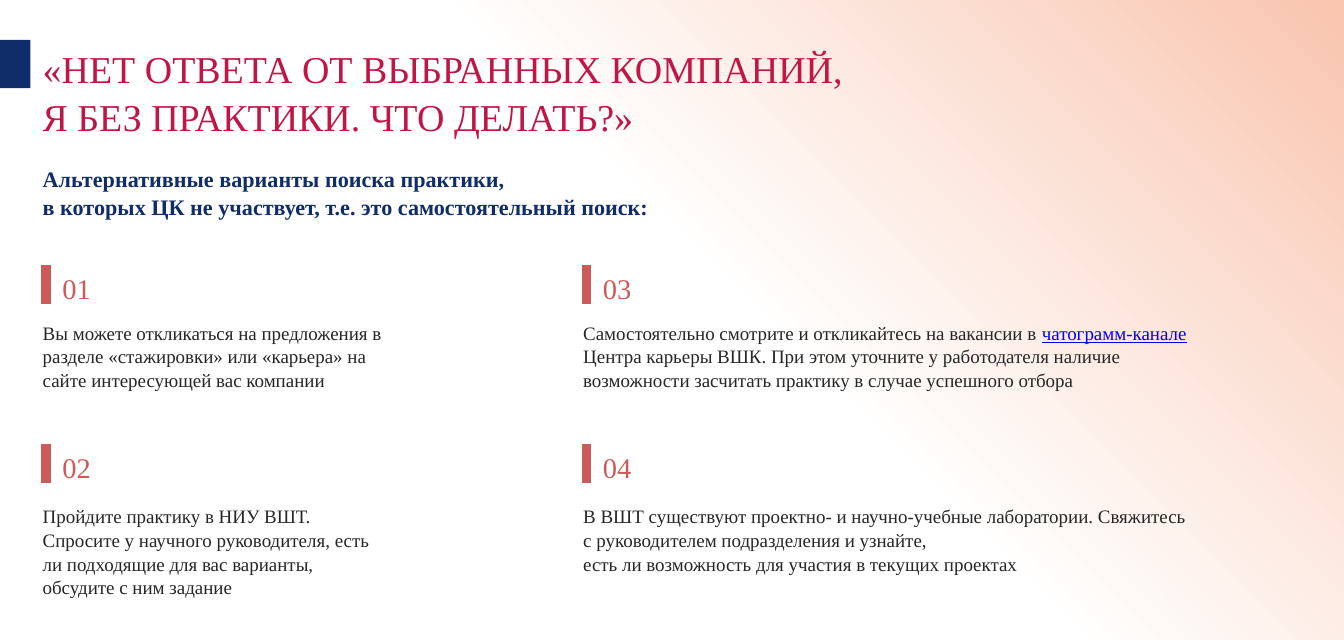
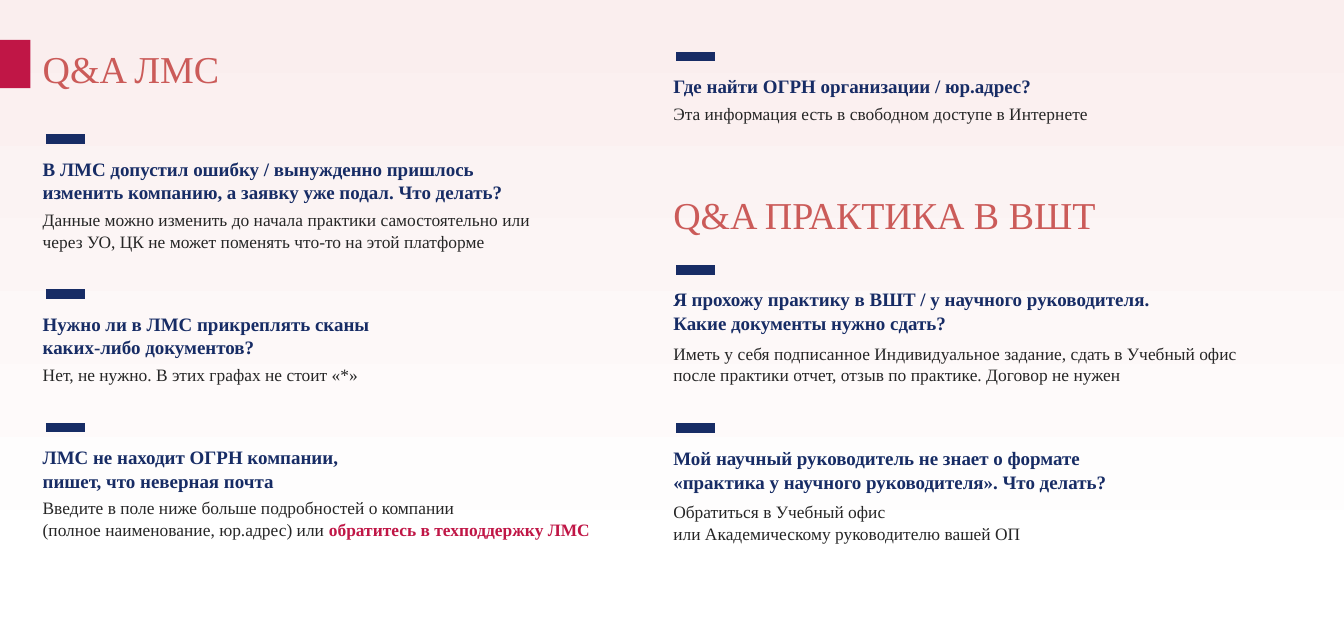
from pptx import Presentation
from pptx.dml.color import RGBColor
from pptx.enum.shapes import MSO_CONNECTOR, MSO_SHAPE
from pptx.enum.text import PP_ALIGN
from pptx.oxml.ns import qn
from pptx.util import Pt
from lxml import etree

LEFT, CENTER = PP_ALIGN.LEFT, PP_ALIGN.CENTER
LINE = MSO_CONNECTOR.STRAIGHT
RECT = MSO_SHAPE.RECTANGLE

FONT = "Times New Roman"
COLORS = {
    "navy": "102D69",
    "ink": "172C65",
    "red": "C01646",
    "coral": "CB5B59",
    "text": "262626",
    "link": "0000FF",
    "white": "FFFFFF",
    "peach": "F9C5AF",
    "pink": "FAEEEE",
}


def color(name):
    return RGBColor.from_string(COLORS[name])


class Deck:
    def __init__(self, width, height):
        self.prs = Presentation()
        self.prs.slide_width = Pt(width)
        self.prs.slide_height = Pt(height)
        self.slide = None

    def page(self, tint, start, angle, flag):
        self.slide = self.prs.slides.add_slide(self.prs.slide_layouts[6])
        fill = self.slide.background.fill
        fill.gradient()
        fill.gradient_angle = angle
        stops = zip(fill.gradient_stops, (start, 1), ("white", tint))
        for stop, place, name in stops:
            stop.position = place
            stop.color.rgb = color(name)
        self.flag(flag)

    def flag(self, name):
        shape = self.slide.shapes.add_shape(RECT, 0, Pt(25.3), Pt(19.3), Pt(30.5))
        shape.shadow.inherit = False
        shape.fill.solid()
        shape.fill.fore_color.rgb = color(name)
        shape.line.fill.background()

    def bar(self, x, y, dx, dy, name):
        line = self.slide.shapes.add_connector(
            LINE, Pt(x), Pt(y), Pt(x + dx), Pt(y + dy))
        line.line.width = Pt(6)
        line.line.color.rgb = color(name)
        props = line._element.find(qn("p:spPr"))
        etree.SubElement(props, qn("a:effectLst"))

    def text(self, paras, x, y, w, h, size=12, tone="text", bold=False, align=LEFT):
        box = self.slide.shapes.add_textbox(Pt(x), Pt(y), Pt(w), Pt(h))
        frame = box.text_frame
        frame.word_wrap = True
        frame.margin_left = frame.margin_right = 0
        frame.margin_top = frame.margin_bottom = 0
        for i, para in enumerate(paras):
            p = frame.add_paragraph() if i else frame.paragraphs[0]
            p.alignment = align
            p.line_spacing = 1.05
            for part in [para] if isinstance(para, str) else para:
                words, look = (part, {}) if isinstance(part, str) else part
                run = p.add_run()
                run.text = words
                font = run.font
                font.name = FONT
                font.size = Pt(size)
                font.bold = look.get("bold", bold)
                font.underline = look.get("line", False)
                font.color.rgb = color(look.get("tone", tone))

    def title(self, paras, x, y, tone):
        self.text(paras, x, y, 820 - x, 30 * len(paras), size=24, tone=tone)

    def step(self, mark, x, y, drop, width, paras):
        self.bar(x + 2, y, 0, 24.5, "coral")
        self.text([mark], x + 6.5, y + 2.8, 30, 24,
                  size=18, tone="coral", align=CENTER)
        self.text(paras, x, y + drop, width, 44)

    def query(self, x, y, ask, width, drop, paras, span):
        self.bar(x + 2, y, 24.5, 0, "ink")
        self.text([ask], x, y + 10.8, width, drop - 14, tone="ink", bold=True)
        self.text(paras, x, y + drop, span, 27, size=11)


def main():
    deck = Deck(850.32, 404.64)
    edge = 27

    deck.page("peach", 0.54, 45, "navy")
    deck.title(["«НЕТ ОТВЕТА ОТ ВЫБРАННЫХ КОМПАНИЙ,",
                "Я БЕЗ ПРАКТИКИ. ЧТО ДЕЛАТЬ?»"], edge, 27.4, "red")
    deck.text(["Альтернативные варианты поиска практики,",
               "в которых ЦК не участвует, т.е. это самостоятельный поиск:"],
              edge, 103.7, 427, 34, size=14, tone="navy", bold=True)
    steps = [
        (223, ["Вы можете откликаться на предложения в разделе «стажировки» "
               "или «карьера» на сайте интересующей вас компании"]),
        (208, ["Пройдите практику в НИУ ВШТ. Спросите у научного руководителя, "
               "есть ли подходящие для вас варианты, обсудите с ним задание"]),
        (385, [["Самостоятельно смотрите и откликайтесь на вакансии в ",
                ("чатограмм-канале", {"tone": "link", "line": True}),
                " Центра карьеры ВШК. При этом уточните у работодателя наличие "
                "возможности засчитать практику в случае успешного отбора"]]),
        (385, ["В ВШТ существуют проектно- и научно-учебные лаборатории. "
               "Свяжитесь с руководителем подразделения и узнайте,",
               "есть ли возможность для участия в текущих проектах"]),
    ]
    rows = [(167.8, 34.5), (280.8, 37.4)]
    for i, (width, paras) in enumerate(steps):
        col, row = divmod(i, 2)
        deck.step(f"{i + 1:02}", edge + 342 * col, *rows[row], width, paras)

    deck.page("pink", 0.09, 90, "red")
    side = 426
    deck.title(["Q&A ЛМС"], edge, 27.4, "coral")
    deck.title(["Q&A ПРАКТИКА В ВШТ"], side, 119.5, "coral")
    queries = [
        (edge, 87.8, "В ЛМС допустил ошибку / вынужденно пришлось изменить "
         "компанию, а заявку уже подал. Что делать?", 298, 43.5,
         ["Данные можно изменить до начала практики самостоятельно или "
          "через УО, ЦК не может поменять что-то на этой платформе"], 320),
        (edge, 185.8, "Нужно ли в ЛМС прикреплять сканы каких-либо документов?",
         235, 43.5, ["Нет, не нужно. В этих графах не стоит «*»"], 320),
        (edge, 270.4, "ЛМС не находит ОГРН компании, пишет, что неверная почта",
         225, 43.5,
         ["Введите в поле ниже больше подробностей о компании",
          ["(полное наименование, юр.адрес) или ",
           ("обратитесь в техподдержку ЛМС", {"tone": "red", "bold": True})]],
         360),
        (side, 35.8, "Где найти ОГРН организации / юр.адрес?", 244, 29,
         ["Эта информация есть в свободном доступе в Интернете"], 376),
        (side, 170.6, "Я прохожу практику в ВШТ / у научного руководителя. "
         "Какие документы нужно сдать?", 327, 45.4,
         ["Иметь у себя подписанное Индивидуальное задание, сдать в Учебный "
          "офис после практики отчет, отзыв по практике. Договор не нужен"], 376),
        (side, 270.6, "Мой научный руководитель не знает о формате «практика "
         "у научного руководителя». Что делать?", 315, 45.4,
         ["Обратиться в Учебный офис",
          "или Академическому руководителю вашей ОП"], 376),
    ]
    for query in queries:
        deck.query(*query)

    deck.prs.save("out.pptx")


if __name__ == "__main__":
    main()
